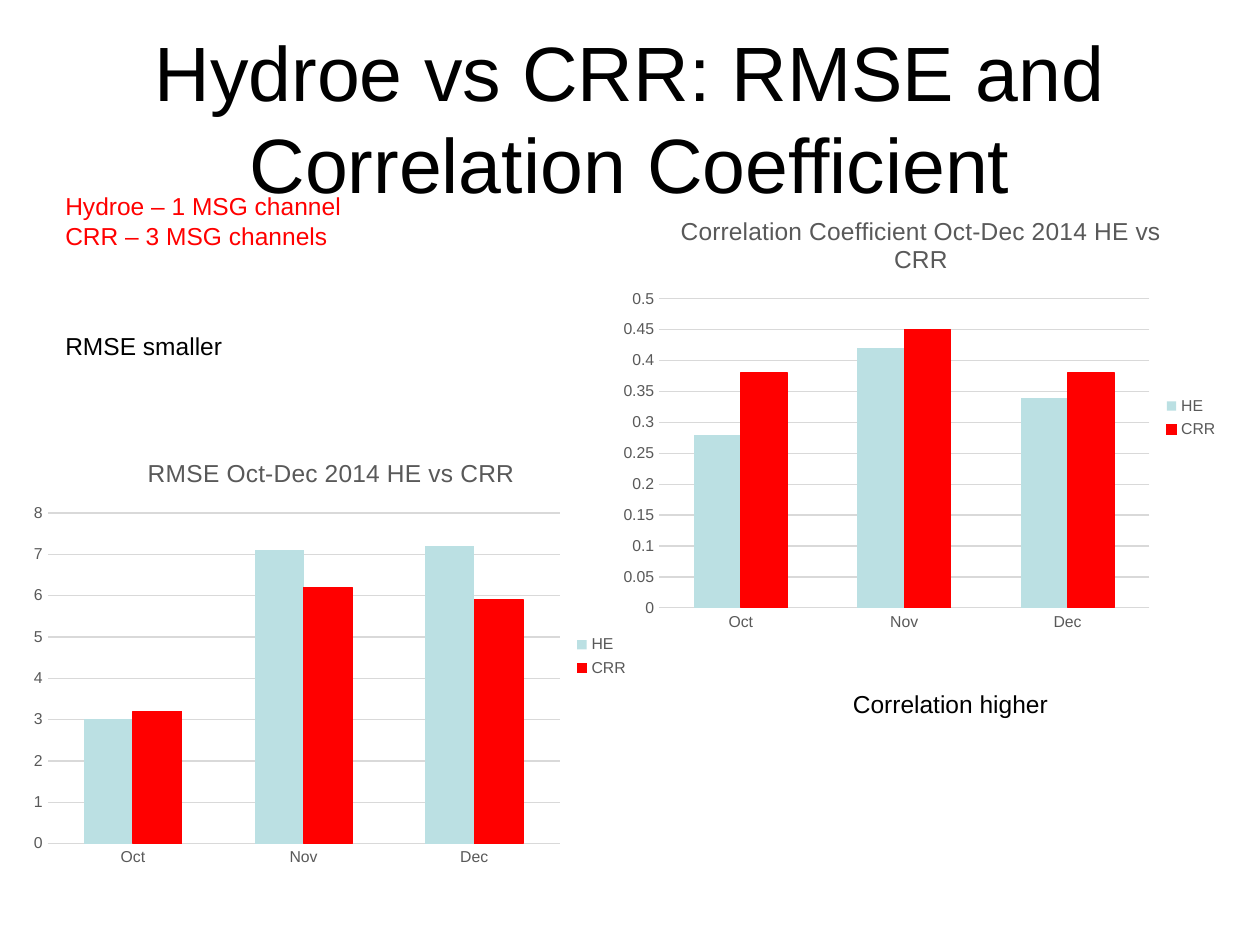
import pptx
import pptx.chart.data
import pptx.dml.color
import pptx.enum.chart
import pptx.enum.text
import pptx.util
from pptx.util import Inches

FONT = "Arial"
COLORS = {"black": "000000", "red": "FF0000", "teal": "BBE0E3",
          "gray": "595959", "grid": "D9D9D9"}
MONTHS = ["Oct", "Nov", "Dec"]


def rgb(name):
    """Return the named colour."""
    return pptx.dml.color.RGBColor.from_string(COLORS[name])


def style_font(font, size, color):
    """Apply the slide font with a size and colour."""
    font.name = FONT
    font.size = pptx.util.Pt(size)
    font.bold = False
    font.color.rgb = rgb(color)


def style_line(line, color):
    """Give a line a colour and the thin chart width."""
    line.color.rgb = rgb(color)
    line.width = pptx.util.Pt(0.75)


def add_title(slide, box, text):
    """Place and format the title placeholder."""
    sp = slide.shapes.title
    sp.left, sp.top, sp.width, sp.height = map(Inches, box)
    tf = sp.text_frame
    tf.text = text
    tf.word_wrap = True
    tf.auto_size = pptx.enum.text.MSO_AUTO_SIZE.NONE
    tf.vertical_anchor = pptx.enum.text.MSO_ANCHOR.MIDDLE
    p = tf.paragraphs[0]
    p.alignment = pptx.enum.text.PP_ALIGN.CENTER
    style_font(p.runs[0].font, 44, "black")


def add_note(slide, box, text, color="black"):
    """Add a text box with one paragraph per line of text."""
    tf = slide.shapes.add_textbox(*map(Inches, box)).text_frame
    tf.text = text
    tf.word_wrap = False
    tf.auto_size = pptx.enum.text.MSO_AUTO_SIZE.SHAPE_TO_FIT_TEXT
    for p in tf.paragraphs:
        style_font(p.runs[0].font, 14, color)


def add_score_chart(slide, box, title, hydroe, crr):
    """Add a column chart comparing HE and CRR by month."""
    data = pptx.chart.data.CategoryChartData()
    data.categories = MONTHS
    data.add_series("HE", hydroe)
    data.add_series("CRR", crr)
    chart = slide.shapes.add_chart(
        pptx.enum.chart.XL_CHART_TYPE.COLUMN_CLUSTERED,
        *map(Inches, box), data).chart
    style_font(chart.font, 10, "black")

    chart.has_title = True
    tf = chart.chart_title.text_frame
    tf.text = title
    style_font(tf.paragraphs[0].runs[0].font, 14, "gray")
    chart.chart_title.include_in_layout = False

    chart.has_legend = True
    chart.legend.position = pptx.enum.chart.XL_LEGEND_POSITION.RIGHT
    chart.legend.include_in_layout = False
    style_font(chart.legend.font, 9, "gray")

    for axis in (chart.category_axis, chart.value_axis):
        axis.major_tick_mark = pptx.enum.chart.XL_TICK_MARK.NONE
        axis.minor_tick_mark = pptx.enum.chart.XL_TICK_MARK.NONE
        style_font(axis.tick_labels.font, 9, "gray")
    style_line(chart.category_axis.format.line, "grid")
    chart.value_axis.format.line.fill.background()
    chart.value_axis.has_major_gridlines = True
    style_line(chart.value_axis.major_gridlines.format.line, "grid")
    chart.value_axis.tick_labels.number_format = "General"
    chart.value_axis.tick_labels.number_format_is_linked = False

    plot = chart.plots[0]
    plot.gap_width = 150
    plot.overlap = 0
    plot.vary_by_categories = False
    for series, color in zip(plot.series, ("teal", "red")):
        series.format.fill.solid()
        series.format.fill.fore_color.rgb = rgb(color)
    style_line(plot.series[1].format.line, "red")


def main():
    """Build the comparison slide and save it."""
    prs = pptx.Presentation()
    prs.slide_width, prs.slide_height = Inches(10), Inches(7.5)
    slide = prs.slides.add_slide(prs.slide_layouts[5])
    add_title(slide, (0.5, 0.3, 9, 1.25),
              "Hydroe vs CRR: RMSE and Correlation Coefficient")
    add_score_chart(slide, (4.85, 1.55, 4.92, 3.53),
                    "Correlation Coefficient Oct-Dec 2014 HE vs CRR",
                    (0.28, 0.42, 0.34), (0.38, 0.45, 0.38))
    add_score_chart(slide, (0.17, 3.47, 4.92, 3.48),
                    "RMSE Oct-Dec 2014 HE vs CRR",
                    (3, 7.1, 7.2), (3.2, 6.2, 5.9))
    add_note(slide, (0.42, 2.58, 1.7, 0.37), "RMSE smaller")
    add_note(slide, (6.67, 5.42, 2.15, 0.37), "Correlation higher")
    add_note(slide, (0.42, 1.47, 2.83, 0.64),
             "Hydroe – 1 MSG channel\nCRR – 3 MSG channels", "red")
    prs.save("out.pptx")


if __name__ == "__main__":
    main()
